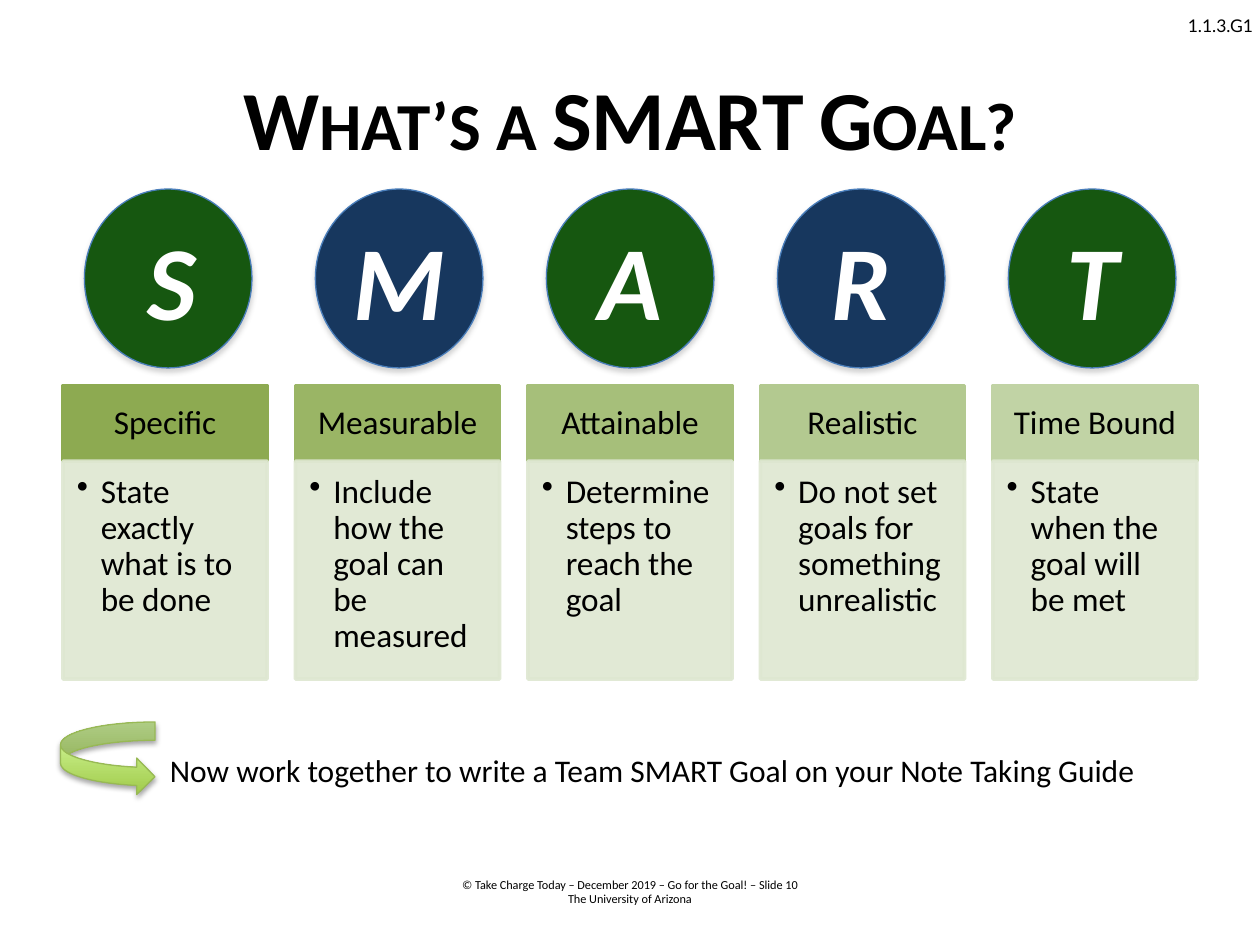
from lxml.etree import SubElement
from pptx import Presentation
from pptx.dml.color import RGBColor
from pptx.enum.shapes import MSO_SHAPE as Shape
from pptx.enum.text import MSO_ANCHOR as Anchor, PP_ALIGN as Align
from pptx.oxml.ns import qn
from pptx.util import Inches, Pt

BLACK = RGBColor(0x00, 0x00, 0x00)
WHITE = RGBColor(0xFF, 0xFF, 0xFF)
GREEN = RGBColor(0x16, 0x57, 0x10)
NAVY = RGBColor(0x17, 0x37, 0x5E)
RIM = RGBColor(0x4A, 0x7E, 0xBB)
PALE = RGBColor(0xDE, 0xE7, 0xD1)
LIME = RGBColor(0xA0, 0xCA, 0x4A)
MINT = RGBColor(0xDA, 0xFF, 0xA5)
EDGE = RGBColor(0x98, 0xB9, 0x55)

CODE = "1.1.3.G1"
TITLE = "What’s a SMART Goal?"
TASK = "Now work together to write a Team SMART Goal on your Note Taking Guide"
FOOTER = ("© Take Charge Today – December 2019 – Go for the Goal! – Slide 10\n"
          "The University of Arizona")
GOALS = [  # letter, heading, heading colour, advice
    ("S", "Specific", RGBColor(0x8D, 0xAA, 0x51), "State exactly what is to be done"),
    ("M", "Measurable", RGBColor(0x9A, 0xB5, 0x65), "Include how the goal can be measured"),
    ("A", "Attainable", RGBColor(0xA6, 0xBF, 0x7A), "Determine steps to reach the goal"),
    ("R", "Realistic", RGBColor(0xB3, 0xC9, 0x90), "Do not set goals for something unrealistic"),
    ("T", "Time Bound", RGBColor(0xC1, 0xD3, 0xA5), "State when the goal will be met"),
]

LEFT, WIDTH = 0.5, 1.62
STEP = (9 - WIDTH) / (len(GOALS) - 1)
DISC_LEFT, DISC_STEP = 0.67, 5.5 / 3


def write(shape, text, size, color=BLACK, align=Align.LEFT, anchor=Anchor.TOP,
          insets=(0.1, 0.05, 0.1, 0.05), font="Calibri"):
    frame = shape.text_frame
    frame.text = text
    frame.word_wrap = True
    frame.vertical_anchor = anchor
    (frame.margin_left, frame.margin_top,
     frame.margin_right, frame.margin_bottom) = map(Inches, insets)
    for para in frame.paragraphs:
        para.alignment = align
        for run in para.runs:
            run.font.name, run.font.size = font, Pt(size)
            run.font.color.rgb = color
    return frame.paragraphs[0]


def add_text(slide, box, *args, **style):
    return write(slide.shapes.add_textbox(*map(Inches, box)), *args, **style)


def add_shape(slide, kind, box, fill, line, width):
    shape = slide.shapes.add_shape(kind, *map(Inches, box))
    shape.shadow.inherit = False
    shape.fill.solid()
    shape.fill.fore_color.rgb = fill
    shape.line.color.rgb = line
    shape.line.width = Pt(width)
    return shape


def drop_shadow(shape, color):
    effects = shape.element.spPr.find(qn("a:effectLst"))
    outer = SubElement(effects, qn("a:outerShdw"), blurRad=str(Pt(3.1)),
                       dist=str(Pt(1.8)), dir="5400000", rotWithShape="0")
    tint = SubElement(outer, qn("a:srgbClr"), val=color)
    SubElement(tint, qn("a:alpha"), val="35000")


def make_bullet(para):
    props = para._p.get_or_add_pPr()
    props.set("marL", str(Inches(0.19)))
    props.set("indent", str(-Inches(0.19)))
    SubElement(props, qn("a:buChar"), char="•")


def add_card(slide, left, heading, color, advice):
    head = add_shape(slide, Shape.RECTANGLE, (left, 3.06, WIDTH, 0.6), color, color, 2)
    para = write(head, heading, 19, align=Align.CENTER, anchor=Anchor.MIDDLE,
                 insets=(0.15, 0.08, 0.15, 0.08))
    para.line_spacing = 0.9

    body = add_shape(slide, Shape.RECTANGLE, (left, 3.66, WIDTH, 1.73), PALE, PALE, 2)
    for tint in list(body.element.spPr.iter(qn("a:srgbClr"))):
        SubElement(tint, qn("a:alpha"), val="90000")
    para = write(body, advice, 19, insets=(0.11, 0.11, 0.15, 0.17))
    para.line_spacing = 0.9
    make_bullet(para)


def add_disc(slide, left, letter, color):
    disc = add_shape(slide, Shape.OVAL, (left, 1.5, 1.33, 1.42), color, RIM, 0.75)
    drop_shadow(disc, "808080")
    para = write(disc, letter, 60, WHITE, Align.CENTER, Anchor.MIDDLE)
    para.runs[0].font.bold = para.runs[0].font.italic = True
    if letter == "S":
        para._p.get_or_add_pPr().set("marL", str(Inches(0.06)))


def add_arrow(slide):
    arrow = add_shape(slide, Shape.CURVED_RIGHT_ARROW, (0.48, 5.73, 0.75, 0.58),
                      LIME, EDGE, 0.75)
    arrow.fill.gradient()
    arrow.fill.gradient_angle = 90
    for stop, color in zip(arrow.fill.gradient_stops, (LIME, MINT)):
        stop.color.rgb = color
    drop_shadow(arrow, "000000")


def main():
    deck = Presentation()
    deck.slide_width, deck.slide_height = Inches(10), Inches(7.5)
    slide = deck.slides.add_slide(deck.slide_layouts[6])

    add_text(slide, (9.33, 0.07, 0.83, 0.27), CODE, 10, font="Lato")
    add_text(slide, (1.25, 6.91, 7.5, 0.34), FOOTER, 7, align=Align.CENTER)
    title = add_text(slide, (0.5, 0.3, 9, 1.25), TITLE, 48,
                     align=Align.CENTER, anchor=Anchor.MIDDLE)
    title.runs[0].font.bold = True
    title.runs[0]._r.get_or_add_rPr().set("cap", "small")

    for i, (letter, heading, color, advice) in enumerate(GOALS):
        add_card(slide, LEFT + i * STEP, heading, color, advice)
        add_disc(slide, DISC_LEFT + i * DISC_STEP, letter, (GREEN, NAVY)[i % 2])

    add_text(slide, (1.25, 5.91, 8.42, 0.4), TASK, 18)
    add_arrow(slide)
    deck.save("out.pptx")


if __name__ == "__main__":
    main()
